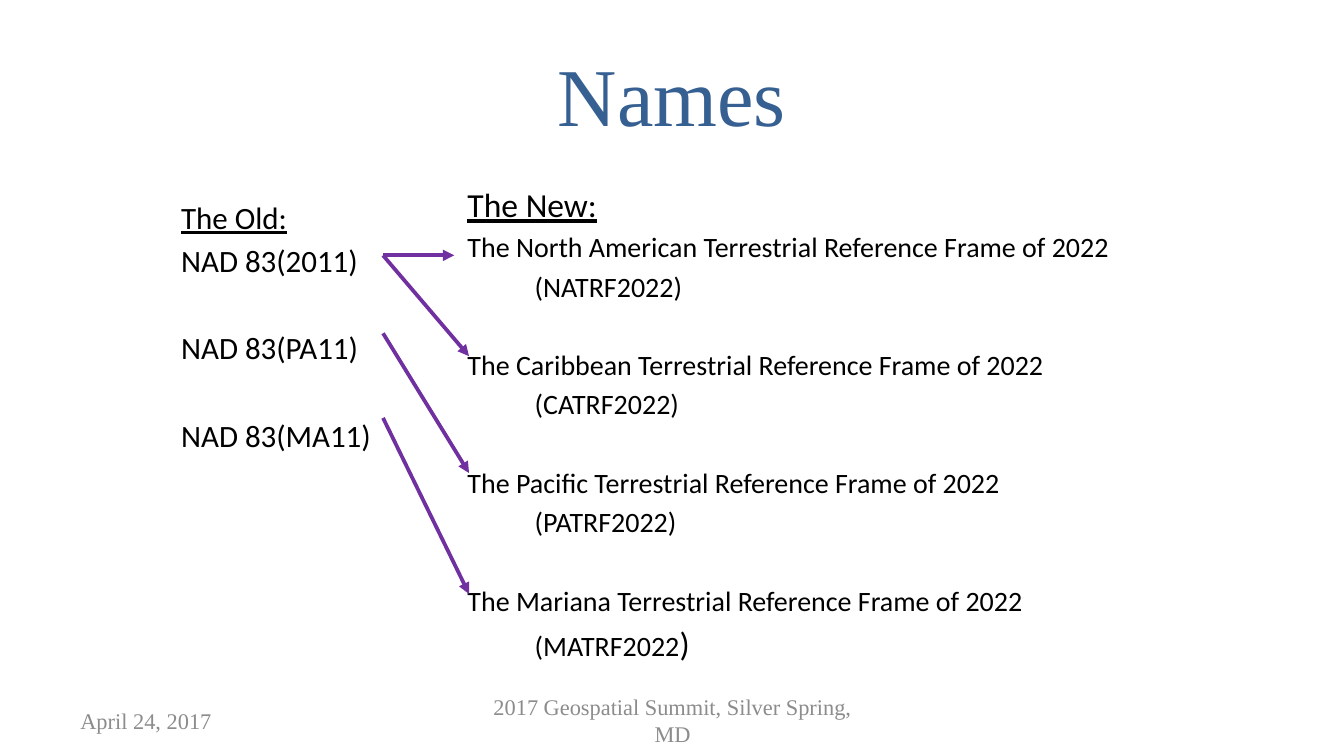
from lxml import etree
from pptx import Presentation
from pptx import util as u
from pptx.dml.color import RGBColor
from pptx.enum import shapes, text
from pptx.oxml import ns

COLORS = {"title": "376092", "body": "000000", "footer": "8C8C8C", "arrow": "7030A0"}
SERIF, SANS = "Times New Roman", "Calibri"
OLD_FRAMES = ["NAD 83(2011)", "NAD 83(PA11)", "NAD 83(MA11)"]
NEW_FRAMES = [("North American", "NATRF2022"), ("Caribbean", "CATRF2022"),
              ("Pacific", "PATRF2022"), ("Mariana", "MATRF2022")]
ARROWS = [(2.85, 1.9, 3.38, 1.9), (2.85, 1.9, 3.49, 2.65),
          (2.85, 2.48, 3.49, 3.52), (2.85, 3.11, 3.49, 4.42)]


def set_font(font, name, size, color):
    """Set the typeface, size and colour of a font."""
    font.name, font.size = name, u.Pt(size)
    font.color.rgb = RGBColor.from_string(COLORS[color])


def add_box(page, place, anchor=text.MSO_ANCHOR.TOP):
    """Add an empty wrapping text box and return its text frame."""
    frame = page.shapes.add_textbox(*map(u.Inches, place)).text_frame
    frame.word_wrap = True
    frame.vertical_anchor = anchor
    return frame


def add_label(page, place, words, size, color, align):
    """Add a single serif paragraph, vertically centred."""
    para = add_box(page, place, text.MSO_ANCHOR.MIDDLE).paragraphs[0]
    para.text, para.alignment = words, align
    set_font(para.font, SERIF, size, color)


def add_heading(frame, words, size):
    """Write the underlined first paragraph of a column."""
    para = frame.paragraphs[0]
    para.text = words
    set_font(para.font, SANS, size, "body")
    para.font.underline = True


def add_line(frame, words, size, before, tab=None):
    """Append a column paragraph with space before and an optional tab stop."""
    para = frame.add_paragraph()
    para.text = words
    para.space_before = u.Pt(before)
    if tab:
        stops = etree.SubElement(para._p.get_or_add_pPr(), ns.qn("a:tabLst"))
        etree.SubElement(stops, ns.qn("a:tab"), pos=str(u.Inches(tab)), algn="l")
    set_font(para.font, SANS, size, "body")
    return para


def add_arrow(page, x1, y1, x2, y2):
    """Add a straight line with a triangle head at its end."""
    arrow = page.shapes.add_connector(
        shapes.MSO_CONNECTOR.STRAIGHT, *map(u.Inches, (x1, y1, x2, y2)))
    arrow.line.width = u.Pt(2)
    arrow.line.color.rgb = RGBColor.from_string(COLORS["arrow"])
    etree.SubElement(arrow.line._get_or_add_ln(), ns.qn("a:tailEnd"), type="triangle")
    etree.SubElement(arrow._element.spPr, ns.qn("a:effectLst"))


def add_old_column(page):
    """Add the list of old frame names."""
    frame = add_box(page, (1.25, 1.43, 2.24, 1.94))
    add_heading(frame, "The Old:", 16.6)
    for index, name in enumerate(OLD_FRAMES):
        add_line(frame, name, 16.6, 26.9 if index else 3)


def add_new_column(page):
    """Add the list of new frame names with their abbreviations."""
    frame = add_box(page, (3.38, 1.32, 5.19, 3.94))
    add_heading(frame, "The New:", 18)
    for index, (region, short) in enumerate(NEW_FRAMES):
        name = f"The {region} Terrestrial Reference Frame of 2022"
        add_line(frame, name, 15, 24.1 if index else 3)
        last = index == len(NEW_FRAMES) - 1
        words = f"\t({short}" if last else f"\t({short})"
        para = add_line(frame, words, 15, 3, tab=0.5)
    span = para.add_run()
    span.text = ")"
    span.font.size = u.Pt(18)


def main():
    """Build the slide and save the deck."""
    deck = Presentation()
    deck.slide_width = u.Inches(10)
    deck.slide_height = deck.slide_width * 9 // 16
    page = deck.slides.add_slide(deck.slide_layouts[6])
    left, center = text.PP_ALIGN.LEFT, text.PP_ALIGN.CENTER
    add_label(page, (0.5, 0.23, 9, 0.94), "Names", 44, "title", center)
    add_old_column(page)
    add_new_column(page)
    add_label(page, (0.5, 5.21, 2.33, 0.3), "April 24, 2017", 12, "footer", left)
    add_label(page, (3.42, 5.21, 3.17, 0.3),
              "2017 Geospatial Summit, Silver Spring, MD", 12, "footer", center)
    for ends in ARROWS:
        add_arrow(page, *ends)
    deck.save("out.pptx")


if __name__ == "__main__":
    main()
